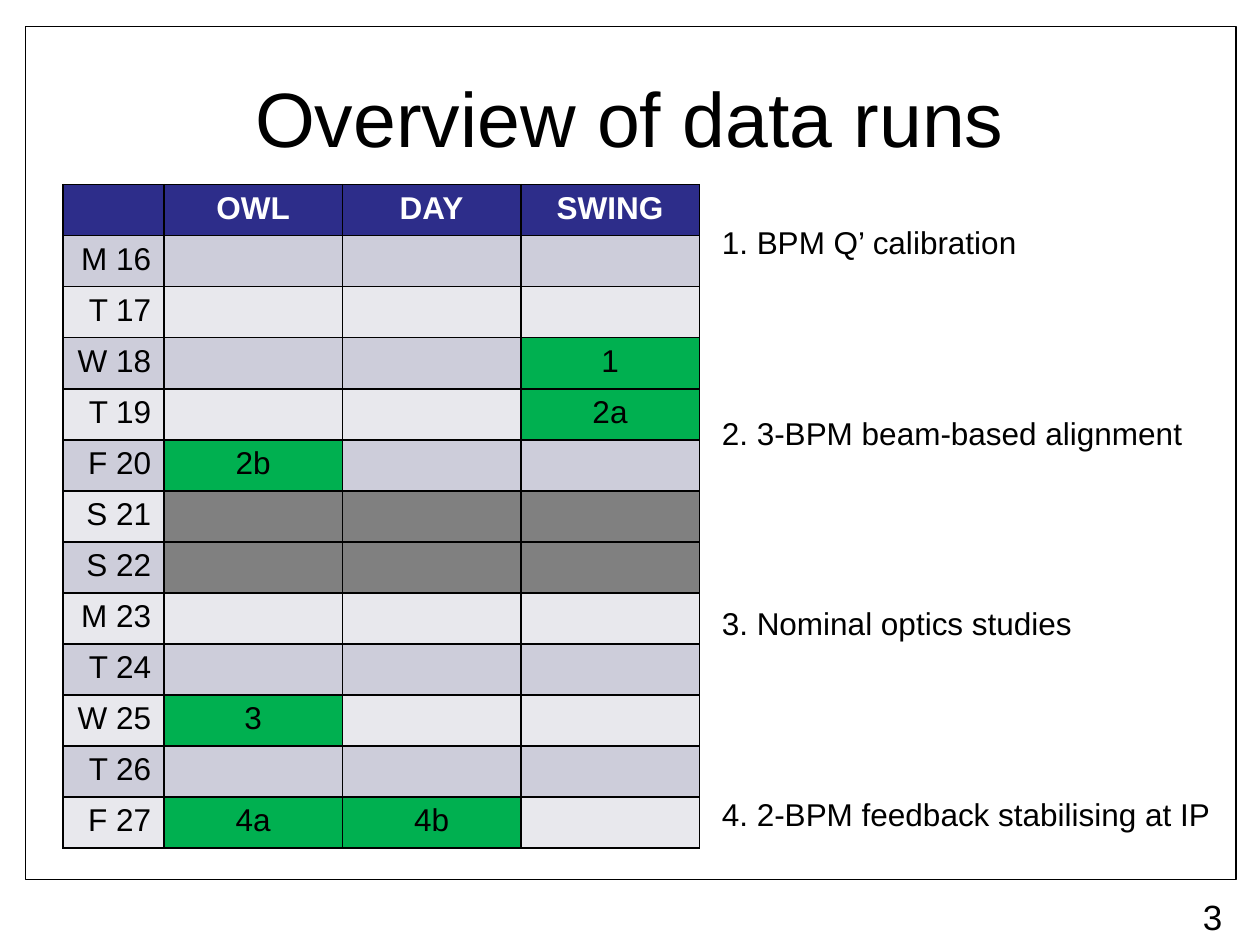
from dataclasses import dataclass

from lxml.etree import SubElement
from pptx import Presentation
from pptx.dml.color import RGBColor as Color
from pptx.enum.shapes import MSO_SHAPE as Shape
from pptx.enum.text import MSO_ANCHOR as Anchor, PP_ALIGN as Align
from pptx.oxml.ns import qn
from pptx.util import Inches, Pt


@dataclass(frozen=True)
class Theme:
    font: str = "Arial"
    ink: str = "000000"
    paper: str = "FFFFFF"
    header: str = "2D2D8A"
    bands: tuple = ("CDCDDA", "E8E8ED")
    run: str = "00B050"
    closed: str = "808080"
    title: int = 44
    number: int = 20
    body: int = 18


class SlideBuilder:
    """Draws styled elements on a page divided into 100 columns and 75 rows."""

    def __init__(self, deck, theme):
        self.theme = theme
        self.column = deck.slide_width / 100
        self.row = deck.slide_height / 75
        self.page = deck.slides.add_slide(deck.slide_layouts[6])

    def place(self, left, top, width, height):
        return (round(left * self.column), round(top * self.row),
                round(width * self.column), round(height * self.row))

    def style(self, para, size, align, color=None, bold=False):
        para.alignment = align
        para.font.name = self.theme.font
        para.font.size = Pt(size)
        para.font.bold = bold
        para.font.color.rgb = Color.from_string(color or self.theme.ink)

    def frame(self, *area):
        shape = self.page.shapes.add_shape(Shape.RECTANGLE, *self.place(*area))
        shape.shadow.inherit = False
        shape.fill.background()
        shape.line.color.rgb = Color.from_string(self.theme.ink)
        shape.line.width = Pt(0.75)

    def text(self, lines, area, size, align=Align.LEFT, anchor=Anchor.TOP, gap=0):
        box = self.page.shapes.add_textbox(*self.place(*area)).text_frame
        box.word_wrap = True
        box.vertical_anchor = anchor
        box.text = "\n".join(lines)
        for index, para in enumerate(box.paragraphs):
            self.style(para, size, align)
            if index:
                para.space_before = Pt(gap)

    def borders(self, cell):
        props = cell._tc.get_or_add_tcPr()
        for position, side in enumerate(("lnL", "lnR", "lnT", "lnB")):
            line = SubElement(props, qn(f"a:{side}"), w=str(Pt(1)))
            fill = SubElement(line, qn("a:solidFill"))
            SubElement(fill, qn("a:srgbClr"), val=self.theme.ink)
            props.remove(line)
            props.insert(position, line)

    def cell(self, cell, text, fill, align, color, bold):
        cell.text = text
        self.style(cell.text_frame.paragraphs[0], self.theme.body, align, color, bold)
        cell.fill.solid()
        cell.fill.fore_color.rgb = Color.from_string(fill)
        self.borders(cell)

    def schedule(self, shifts, days, runs, closed, area, day_width):
        theme = self.theme
        rows = [["", *shifts]]
        rows += [[day, *(runs.get((day, shift), "") for shift in shifts)] for day in days]
        left, top, width, height = self.place(*area)
        table = self.page.shapes.add_table(
            len(rows), len(rows[0]), left, top, width, height).table
        first = round(day_width * self.column)
        for number, column in enumerate(table.columns):
            column.width = (width - first) // len(shifts) if number else first
        for r, values in enumerate(rows):
            table.rows[r].height = height // len(rows)
            for c, value in enumerate(values):
                fill = theme.bands[(r - 1) % 2]
                if r == 0:
                    fill = theme.header
                elif c and value:
                    fill = theme.run
                elif c and values[0] in closed:
                    fill = theme.closed
                self.cell(table.cell(r, c), value, fill,
                          Align.CENTER if c else Align.RIGHT,
                          theme.ink if r else theme.paper, r == 0)


def main():
    deck = Presentation()
    deck.slide_width, deck.slide_height = Inches(10), Inches(7.5)
    theme = Theme()
    slide = SlideBuilder(deck, theme)

    slide.frame(2, 2.1, 96.1, 67.7)
    slide.text(["Overview of data runs"], (5, 3, 90, 12.5), theme.title,
               Align.CENTER, Anchor.MIDDLE)
    days = [f"{letter} {date}" for date, letter in enumerate("MTWTFSSMTWTF", 16)]
    runs = {
        ("W 18", "SWING"): "1",
        ("T 19", "SWING"): "2a",
        ("F 20", "OWL"): "2b",
        ("W 25", "OWL"): "3",
        ("F 27", "OWL"): "4a",
        ("F 27", "DAY"): "4b",
    }
    slide.schedule(["OWL", "DAY", "SWING"], days, runs, {"S 21", "S 22"},
                   (5, 14.65, 50.5, 52.7), 8)
    slide.text(["3"], (92.5, 70.6, 5.5, 3.2), theme.number, Align.RIGHT)
    topics = ["BPM Q’ calibration", "3-BPM beam-based alignment",
              "Nominal optics studies", "2-BPM feedback stabilising at IP"]
    slide.text([f"{number}. {topic}" for number, topic in enumerate(topics, 1)],
               (56.3, 17.2, 40.9, 49.5), theme.body, gap=87.3)
    deck.save("out.pptx")


if __name__ == "__main__":
    main()
